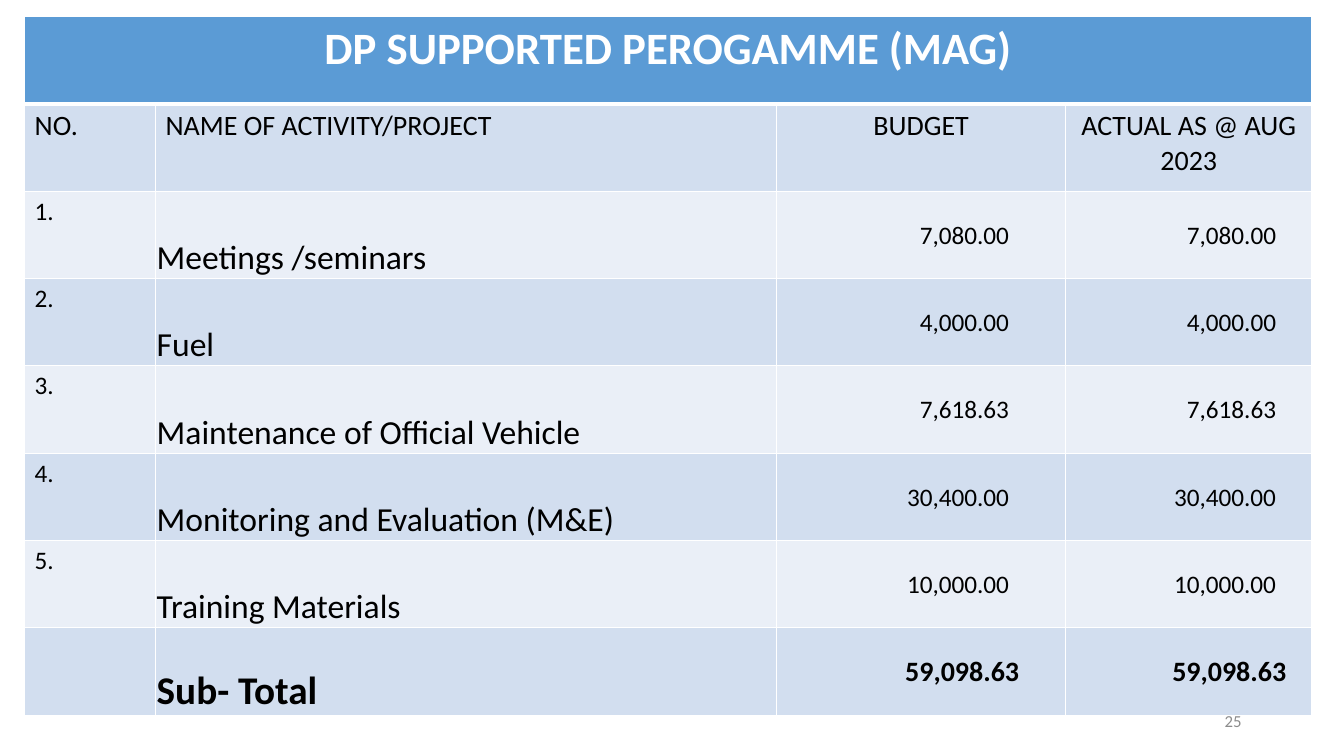
from dataclasses import dataclass

from lxml.etree import SubElement
from pptx import Presentation
from pptx.dml.color import RGBColor
from pptx.enum.text import MSO_ANCHOR, PP_ALIGN
from pptx.oxml.ns import qn
from pptx.util import Cm, Pt


@dataclass(frozen=True)
class Theme:
    font: str = "Calibri"
    white: str = "FFFFFF"
    black: str = "000000"
    grey: str = "8C8C8C"
    header: str = "5B9BD5"
    dark_band: str = "D2DEEF"
    light_band: str = "EAEFF7"
    title_size: int = 32
    total_size: int = 28
    activity_size: int = 24
    heading_size: int = 20
    body_size: int = 18
    number_size: int = 12
    thin_line: float = 1
    thick_line: float = 3


COLUMN_WIDTHS = (3.3, 15.65, 7.29, 6.2)
ROW_HEIGHT = 2.2
HEADINGS = ("NO.", "NAME OF ACTIVITY/PROJECT", "BUDGET", "ACTUAL AS @ AUG 2023")
ACTIVITIES = (
    ("Meetings /seminars", "7,080.00"),
    ("Fuel", "4,000.00"),
    ("Maintenance of Official Vehicle", "7,618.63"),
    ("Monitoring and Evaluation (M&E)", "30,400.00"),
    ("Training Materials", "10,000.00"),
)
TOTAL = "59,098.63"
AMOUNT_INSETS = (1.43, 0.9)
TOTAL_INSETS = (1.17, 0.64)


class SlideBuilder:
    def __init__(self, slide, theme):
        self.slide = slide
        self.theme = theme

    def set_text(self, text_frame, text, size, color, align=PP_ALIGN.LEFT, bold=False):
        text_frame.text = text
        paragraph = text_frame.paragraphs[0]
        paragraph.alignment = align
        for run in paragraph.runs:
            run.font.name = self.theme.font
            run.font.size = Pt(size)
            run.font.bold = bold
            run.font.color.rgb = RGBColor.from_string(color)

    def text_box(self, text, left, top, width, height, size, color, align):
        box = self.slide.shapes.add_textbox(Cm(left), Cm(top), Cm(width), Cm(height))
        box.text_frame.word_wrap = True
        box.text_frame.vertical_anchor = MSO_ANCHOR.MIDDLE
        self.set_text(box.text_frame, text, size, color, align)

    def table(self, left, top, widths, row_count, row_height):
        frame = self.slide.shapes.add_table(
            row_count, len(widths), Cm(left), Cm(top),
            Cm(sum(widths)), Cm(row_height * row_count))
        table = frame.table
        for column, width in zip(table.columns, widths):
            column.width = Cm(width)
        for index, row in enumerate(table.rows):
            row.height = Cm(row_height)
            for cell in row.cells:
                self.paint(cell, index)
        return table

    def paint(self, cell, row_index):
        """Give a cell its white borders and the fill of its row."""
        theme = self.theme
        properties = cell._tc.get_or_add_tcPr()
        for side in "LRTB":
            thick = (row_index, side) in ((0, "B"), (1, "T"))
            width = theme.thick_line if thick else theme.thin_line
            line = SubElement(properties, qn(f"a:ln{side}"), w=str(Pt(width)))
            fill = SubElement(line, qn("a:solidFill"))
            SubElement(fill, qn("a:srgbClr"), val=theme.white)
        band = theme.dark_band if row_index % 2 else theme.light_band
        if row_index == 0:
            band = theme.header
        cell.fill.solid()
        cell.fill.fore_color.rgb = RGBColor.from_string(band)

    def tight_cell(self, cell, text, size, anchor, align, right=0.03, bold=False):
        """Fill in a cell with almost no margins besides the right one."""
        cell.margin_left = cell.margin_top = Cm(0.03)
        cell.margin_right = Cm(right)
        cell.margin_bottom = 0
        cell.vertical_anchor = anchor
        self.set_text(cell.text_frame, text, size, self.theme.black, align, bold)

    def budget_row(self, cells, name, amount, name_size, amount_size, insets, bold=False):
        self.tight_cell(cells[1], name, name_size, MSO_ANCHOR.BOTTOM,
                        PP_ALIGN.LEFT, bold=bold)
        for cell, inset in zip(cells[2:], insets):
            self.tight_cell(cell, amount, amount_size, MSO_ANCHOR.MIDDLE,
                            PP_ALIGN.RIGHT, inset, bold)


def main():
    presentation = Presentation()
    presentation.slide_width = Cm(33.87)
    presentation.slide_height = Cm(19.05)
    theme = Theme()
    slide = presentation.slides.add_slide(presentation.slide_layouts[6])
    builder = SlideBuilder(slide, theme)

    table = builder.table(0.62, 0.42, COLUMN_WIDTHS, len(ACTIVITIES) + 3, ROW_HEIGHT)
    rows = [list(row.cells) for row in table.rows]

    title = rows[0][0]
    title.merge(rows[0][-1])
    builder.set_text(title.text_frame, "DP SUPPORTED PEROGAMME (MAG)",
                     theme.title_size, theme.white, PP_ALIGN.CENTER, bold=True)

    for index, (cell, heading) in enumerate(zip(rows[1], HEADINGS)):
        align = PP_ALIGN.LEFT if index < 2 else PP_ALIGN.CENTER
        builder.set_text(cell.text_frame, heading, theme.heading_size, theme.black, align)

    for number, (cells, activity) in enumerate(zip(rows[2:], ACTIVITIES), start=1):
        builder.set_text(cells[0].text_frame, f"{number}.", theme.body_size, theme.black)
        builder.budget_row(cells, *activity, theme.activity_size,
                           theme.body_size, AMOUNT_INSETS)

    # The last row sums up the activities.
    builder.budget_row(rows[-1], "Sub- Total", TOTAL, theme.total_size,
                       theme.heading_size, TOTAL_INSETS, bold=True)

    builder.text_box("25", 23.92, 17.65, 7.62, 1.01,
                     theme.number_size, theme.grey, PP_ALIGN.RIGHT)
    presentation.save("out.pptx")


if __name__ == "__main__":
    main()
